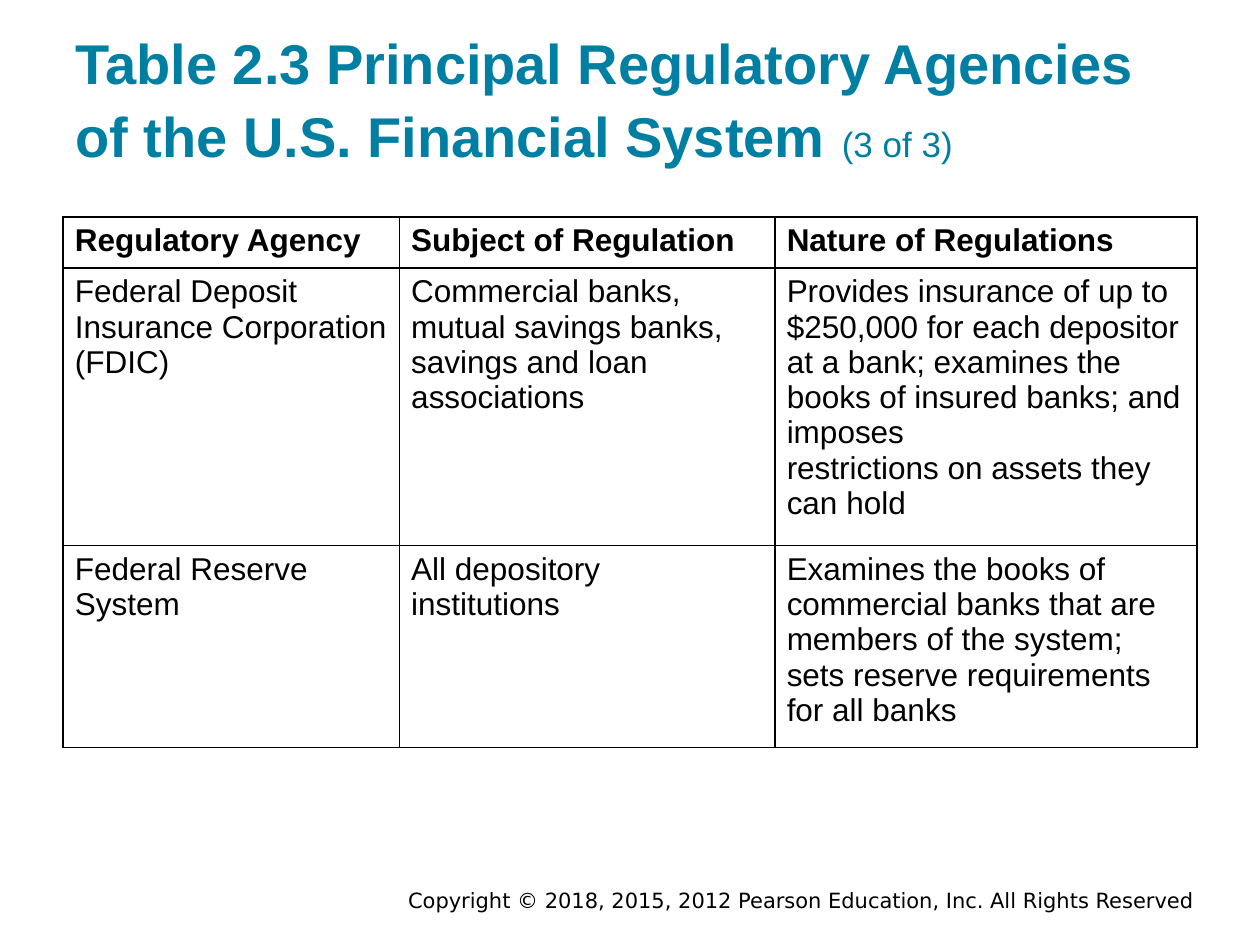
from dataclasses import dataclass

from lxml.etree import SubElement
from pptx import Presentation
from pptx.dml.color import RGBColor
from pptx.enum.text import MSO_ANCHOR, PP_ALIGN
from pptx.oxml.ns import qn
from pptx.util import Cm, Pt


@dataclass(frozen=True)
class Theme:
    title_color: str = "007FA3"
    text_color: str = "000000"
    background: str = "FFFFFF"
    font: str = "Arial"
    footer_font: str = "DejaVu Sans"
    title_size: int = 32
    counter_size: int = 20
    table_size: int = 18
    footer_size: int = 12
    border_width: int = 1


class SlideBuilder:
    def __init__(self, slide, theme):
        self.slide = slide
        self.theme = theme
        slide.background.fill.solid()
        slide.background.fill.fore_color.rgb = RGBColor.from_string(theme.background)

    def style(self, font, size, color, name=None, bold=False):
        font.name = name or self.theme.font
        font.size = Pt(size)
        font.bold = bold
        font.color.rgb = RGBColor.from_string(color)

    def text_box(self, left, top, width, height, inset, anchor):
        """Add an empty wrapping text box and return its text frame."""
        shape = self.slide.shapes.add_textbox(Cm(left), Cm(top), Cm(width), Cm(height))
        text_frame = shape.text_frame
        text_frame.word_wrap = True
        text_frame.vertical_anchor = anchor
        text_frame.margin_left = text_frame.margin_right = Cm(0.25)
        text_frame.margin_top = text_frame.margin_bottom = Cm(inset)
        return text_frame

    def title(self, text, counter):
        theme = self.theme
        text_frame = self.text_box(1.27, 0.61, 22.86, 3.05, 0.25, MSO_ANCHOR.BOTTOM)
        paragraph = text_frame.paragraphs[0]
        paragraph.line_spacing = 1.09
        for part, size, bold in (
            (text + " ", theme.title_size, True),
            (counter, theme.counter_size, False),
        ):
            run = paragraph.add_run()
            run.text = part
            self.style(run.font, size, theme.title_color, bold=bold)

    def footer(self, text):
        theme = self.theme
        text_frame = self.text_box(4.45, 17.86, 19.88, 0.56, 0.13, MSO_ANCHOR.MIDDLE)
        paragraph = text_frame.paragraphs[0]
        paragraph.text = text
        paragraph.alignment = PP_ALIGN.RIGHT
        self.style(paragraph.runs[0].font, theme.footer_size, theme.text_color,
                   theme.footer_font)

    def border(self, cell):
        properties = cell._tc.get_or_add_tcPr()
        for side in ("lnL", "lnR", "lnT", "lnB"):
            line = SubElement(properties, qn(f"a:{side}"),
                              w=str(Pt(self.theme.border_width)))
            fill = SubElement(line, qn("a:solidFill"))
            SubElement(fill, qn("a:srgbClr"), val=self.theme.text_color)

    def cell(self, cell, text, bold):
        theme = self.theme
        cell.margin_left = cell.margin_right = Cm(0.24)
        cell.margin_top = cell.margin_bottom = Cm(0.13)
        self.border(cell)
        cell.fill.solid()
        cell.fill.fore_color.rgb = RGBColor.from_string(theme.background)
        cell.text_frame.text = text
        for paragraph in cell.text_frame.paragraphs:
            for run in paragraph.runs:
                self.style(run.font, theme.table_size, theme.text_color, bold=bold)

    def table(self, rows, left, top, widths, heights):
        table = self.slide.shapes.add_table(
            len(rows), len(widths), Cm(left), Cm(top), Cm(sum(widths)), Cm(sum(heights))
        ).table
        table.horz_banding = False
        for column, width in zip(table.columns, widths):
            column.width = Cm(width)
        for row_index, (texts, height) in enumerate(zip(rows, heights)):
            table.rows[row_index].height = Cm(height)
            for column_index, text in enumerate(texts):
                self.cell(table.cell(row_index, column_index), text, row_index == 0)


AGENCIES = [
    ("Regulatory Agency", "Subject of Regulation", "Nature of Regulations"),
    (
        "Federal Deposit\nInsurance Corporation (FDIC)",
        "Commercial banks,\nmutual savings banks,\nsavings and loan\nassociations",
        "Provides insurance of up to $250,000 for each depositor\n"
        "at a bank; examines the books of insured banks; and imposes\n"
        "restrictions on assets they can hold",
    ),
    (
        "Federal Reserve\nSystem",
        "All depository\ninstitutions",
        "Examines the books of\ncommercial banks that are members of the system; "
        "sets reserve requirements for all banks",
    ),
]


def main():
    presentation = Presentation()
    presentation.slide_width = Cm(25.4)
    presentation.slide_height = Cm(19.05)
    slide = presentation.slides.add_slide(presentation.slide_layouts[6])
    builder = SlideBuilder(slide, Theme())
    builder.footer("Copyright © 2018, 2015, 2012 Pearson Education, Inc. All Rights Reserved")
    builder.title("Table 2.3 Principal Regulatory Agencies of the U.S. Financial System",
                  "(3 of 3)")
    builder.table(AGENCIES, 1.27, 4.37, widths=(6.78, 7.57, 8.51),
                  heights=(1.03, 5.2, 3.8))
    presentation.save("out.pptx")


if __name__ == "__main__":
    main()
